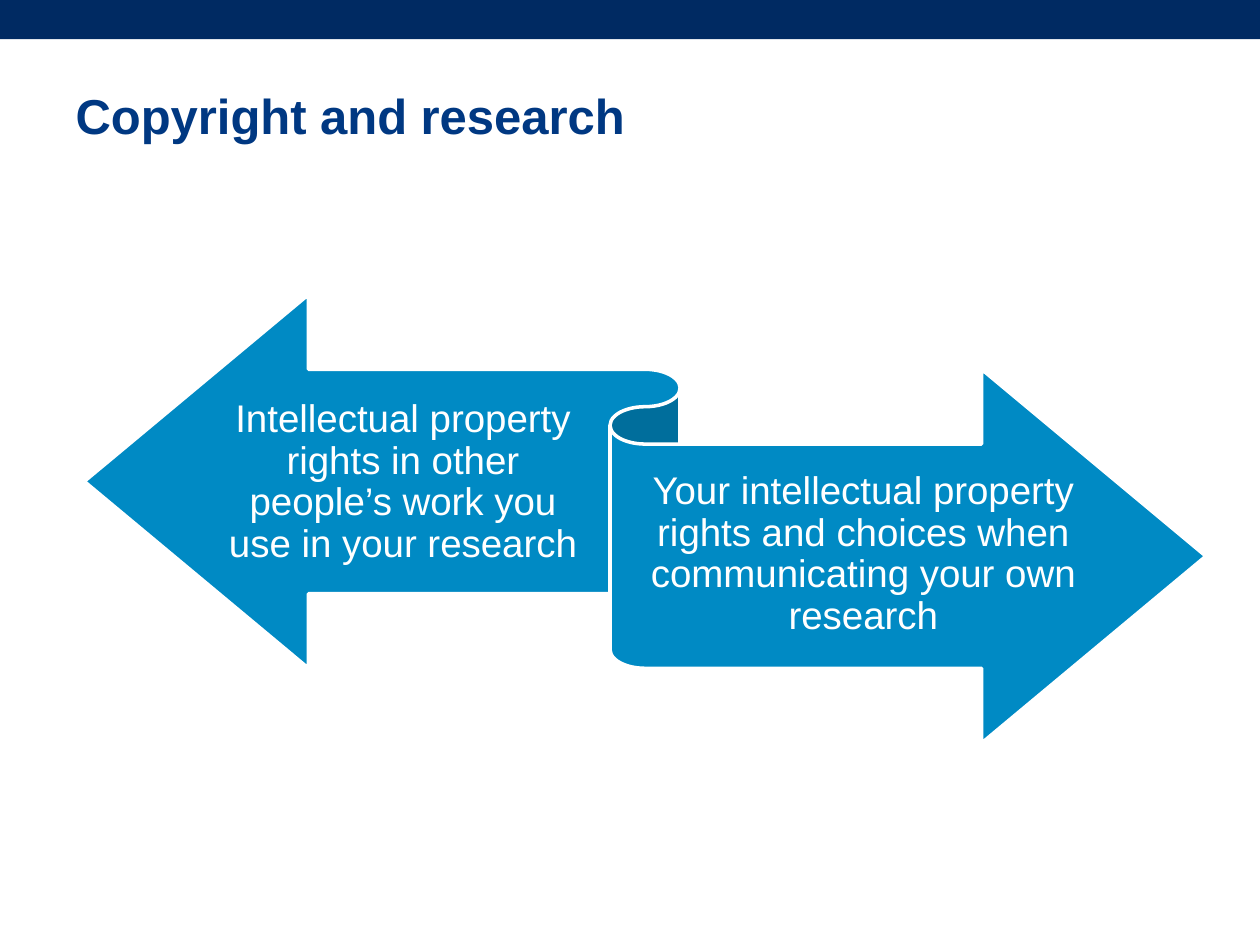
from pptx import Presentation
from pptx import util as u
from pptx.dml.color import RGBColor
from pptx.enum import shapes, text

WHITE, NAVY, TITLE_BLUE, RIBBON_BLUE = "FFFFFF", "002A62", "003882", "008AC4"


def paint(target, color):
    """Give a fill a solid colour."""
    target.solid()
    target.fore_color.rgb = RGBColor.from_string(color)


def write(para, words, size, color, bold=False):
    """Add one formatted run to a paragraph."""
    span = para.add_run()
    span.text = words
    span.font.name = "Arial"
    span.font.size = u.Pt(size)
    span.font.bold = bold
    paint(span.font.fill, color)


deck = Presentation()
deck.slide_width, deck.slide_height = u.Cm(25.4), u.Cm(19.05)
page = deck.slides.add_slide(deck.slide_layouts[5])
paint(page.background.fill, WHITE)

# Band across the top
band = page.shapes.add_shape(shapes.MSO_SHAPE.RECTANGLE, 0, 0, deck.slide_width, u.Cm(0.79))
band.shadow.inherit = False
paint(band.fill, NAVY)
band.line.fill.background()

# Title
title = page.shapes.title
title.left, title.top, title.width, title.height = u.Cm(1.27), u.Cm(1.52), u.Cm(23.04), u.Cm(1.6)
title.text_frame.vertical_anchor = text.MSO_ANCHOR.MIDDLE
para = title.text_frame.paragraphs[0]
para.alignment = text.PP_ALIGN.LEFT
write(para, "Copyright and research", 28, TITLE_BLUE, bold=True)

# Two-way ribbon
ribbon = page.shapes.add_shape(
    shapes.MSO_SHAPE.LEFT_RIGHT_RIBBON, u.Cm(1.7), u.Cm(5.94), u.Cm(22.61), u.Cm(9.04))
ribbon.shadow.inherit = False
paint(ribbon.fill, RIBBON_BLUE)
paint(ribbon.line.fill, WHITE)
ribbon.line.width = u.Pt(2)

# Text on the two halves: left, top, width, words
halves = [
    (4.39, 7.52, 7.47,
     "Intellectual property rights in other people’s work you use in your research"),
    (13, 8.97, 8.81,
     "Your intellectual property rights and choices when communicating your own research"),
]
for left, top, width, words in halves:
    box = page.shapes.add_textbox(u.Cm(left), u.Cm(top), u.Cm(width), u.Cm(4.42))
    frame = box.text_frame
    frame.word_wrap = True
    frame.vertical_anchor = text.MSO_ANCHOR.MIDDLE
    frame.margin_left = frame.margin_right = 0
    frame.margin_top = frame.margin_bottom = u.Cm(0.23)
    para = frame.paragraphs[0]
    para.alignment = text.PP_ALIGN.CENTER
    para.line_spacing = 0.9
    write(para, words, 22, WHITE)

deck.save("out.pptx")
